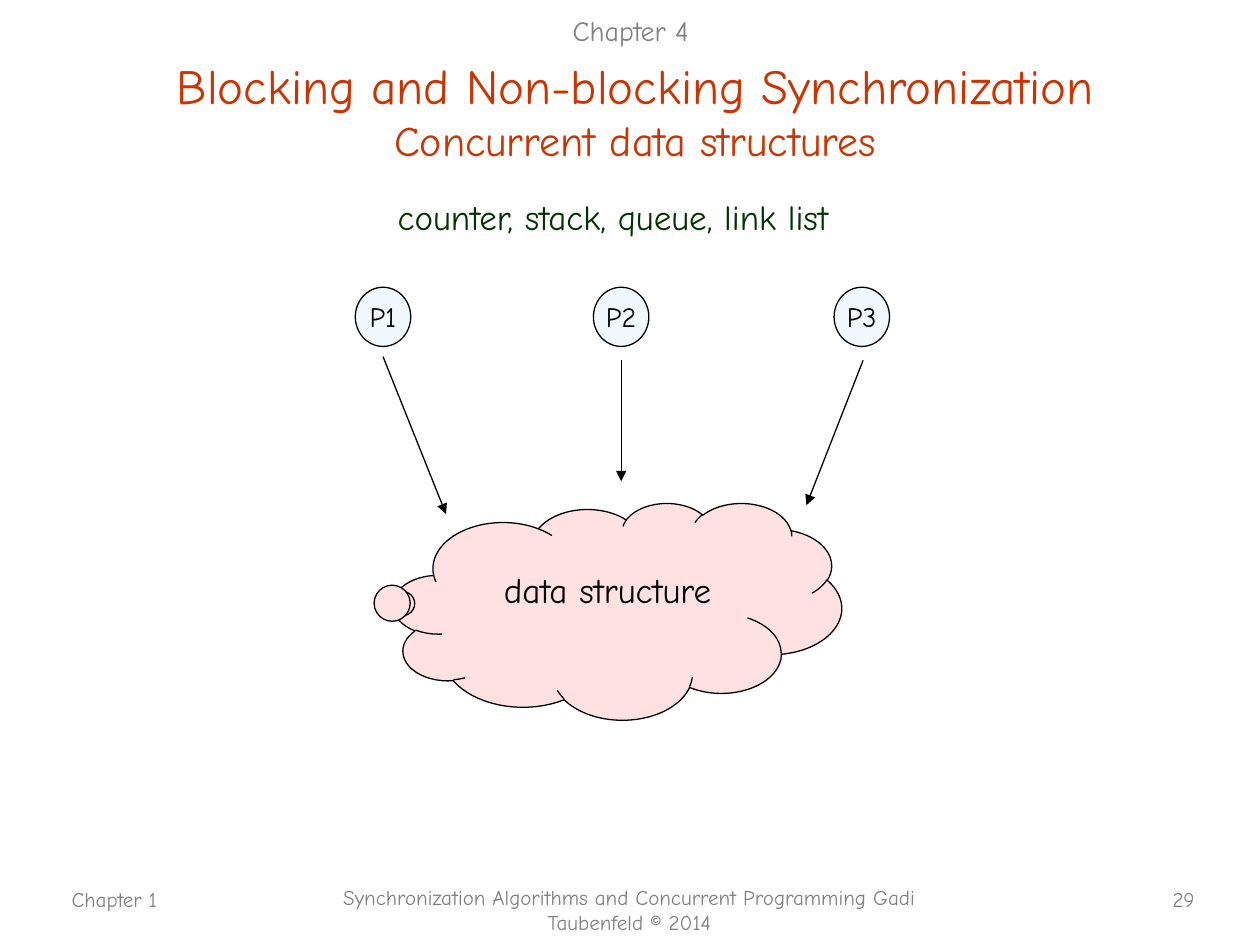
from lxml import etree
from pptx import Presentation
from pptx.dml.color import RGBColor
from pptx.enum.shapes import MSO_CONNECTOR, MSO_SHAPE
from pptx.enum.text import MSO_ANCHOR, PP_ALIGN
from pptx.oxml import parse_xml
from pptx.oxml.ns import nsdecls, qn
from pptx.util import Inches, Pt

FONT = "Comic Neue"
BLACK = RGBColor(0x00, 0x00, 0x00)
GRAY = RGBColor(0x80, 0x80, 0x80)
RED = RGBColor(0xCC, 0x33, 0x00)
GREEN = RGBColor(0x00, 0x33, 0x00)
PALE_BLUE = RGBColor(0xEF, 0xF9, 0xFF)
PINK = RGBColor(0xFF, 0xE1, 0xE1)
TEXT_SHADOW = (
    f'<a:effectLst {nsdecls("a")}><a:outerShdw blurRad="38100" dist="38100" dir="2700000">'
    '<a:srgbClr val="C0C0C0"/></a:outerShdw></a:effectLst>'
)


def add_text(paragraph, text, size, color, alignment=PP_ALIGN.CENTER):
    paragraph.alignment = alignment
    run = paragraph.add_run()
    run.text = text
    run.font.size = Pt(size)
    run.font.name = FONT
    run.font.color.rgb = color
    return run


def add_outlined_shape(shapes, kind, left, top, width, height, fill):
    shape = shapes.add_shape(kind, Inches(left), Inches(top), Inches(width), Inches(height))
    shape.shadow.inherit = False
    shape.fill.solid()
    shape.fill.fore_color.rgb = fill
    shape.line.color.rgb = BLACK
    shape.line.width = Pt(0.75)
    return shape


presentation = Presentation()
presentation.slide_width = Inches(10)
presentation.slide_height = Inches(7.5)
slide = presentation.slides.add_slide(presentation.slide_layouts[5])
shapes = slide.shapes

title = shapes.title
title.left, title.top = Inches(0.29), Inches(0.36)
title.width, title.height = Inches(9.5), Inches(1.03)
title.text_frame.vertical_anchor = MSO_ANCHOR.MIDDLE
heading = title.text_frame.paragraphs[0]
heading_run = add_text(heading, "Blocking and Non-blocking Synchronization", 28, RED)
heading.add_line_break()
subheading_run = add_text(heading, "Concurrent data structures", 24, RED)
for run in (heading_run, subheading_run):
    run.font.fill._xPr.find(qn("a:solidFill")).addnext(parse_xml(TEXT_SHADOW))

processes = [
    ("P1", 2.82, (3.04, 2.83), (3.54, 4.08)),
    ("P2", 4.71, (4.93, 2.86), (4.93, 3.82)),
    ("P3", 6.62, (6.85, 2.86), (6.4, 4.01)),
]
for name, left, start, end in processes:
    process = add_outlined_shape(shapes, MSO_SHAPE.OVAL, left, 2.28, 0.44, 0.47, PALE_BLUE)
    process.text_frame.word_wrap = False
    process.text_frame.vertical_anchor = MSO_ANCHOR.MIDDLE
    add_text(process.text_frame.paragraphs[0], name, 16, BLACK)

    arrow = shapes.add_connector(
        MSO_CONNECTOR.STRAIGHT, Inches(start[0]), Inches(start[1]), Inches(end[0]), Inches(end[1])
    )
    arrow.line.color.rgb = BLACK
    arrow.line.width = Pt(0.75)
    etree.SubElement(arrow.line._get_or_add_ln(), qn("a:tailEnd"), type="triangle")
    etree.SubElement(arrow._element.spPr, qn("a:effectLst"))

cloud = add_outlined_shape(shapes, MSO_SHAPE.CLOUD_CALLOUT, 3.12, 3.99, 3.56, 1.72, PINK)
cloud.adjustments[0] = -0.482
cloud.adjustments[1] = -0.035

LEFT, CENTER, RIGHT = PP_ALIGN.LEFT, PP_ALIGN.CENTER, PP_ALIGN.RIGHT
TOP, MIDDLE = MSO_ANCHOR.TOP, MSO_ANCHOR.MIDDLE
labels = [
    ("data structure", 3.9, 4.46, 2.11, 0.43, 20, BLACK, LEFT, TOP),
    ("counter, stack, queue, link list", 1.62, 1.56, 6.49, 0.32, 20, GREEN, CENTER, MIDDLE),
    ("Chapter 4", 4.06, 0.06, 1.89, 0.36, 16, GRAY, CENTER, MIDDLE),
    ("Chapter 1", 0.47, 6.99, 2.08, 0.5, 12, GRAY, LEFT, TOP),
    ("Synchronization Algorithms and Concurrent Programming Gadi Taubenfeld © 2014",
     2.58, 6.97, 4.83, 0.5, 12, GRAY, CENTER, TOP),
    ("29", 9.11, 6.99, 0.47, 0.3, 12, GRAY, RIGHT, TOP),
]
for text, left, top, width, height, size, color, alignment, anchor in labels:
    label = shapes.add_textbox(Inches(left), Inches(top), Inches(width), Inches(height))
    label.text_frame.word_wrap = True
    label.text_frame.vertical_anchor = anchor
    add_text(label.text_frame.paragraphs[0], text, size, color, alignment)

presentation.save("out.pptx")
